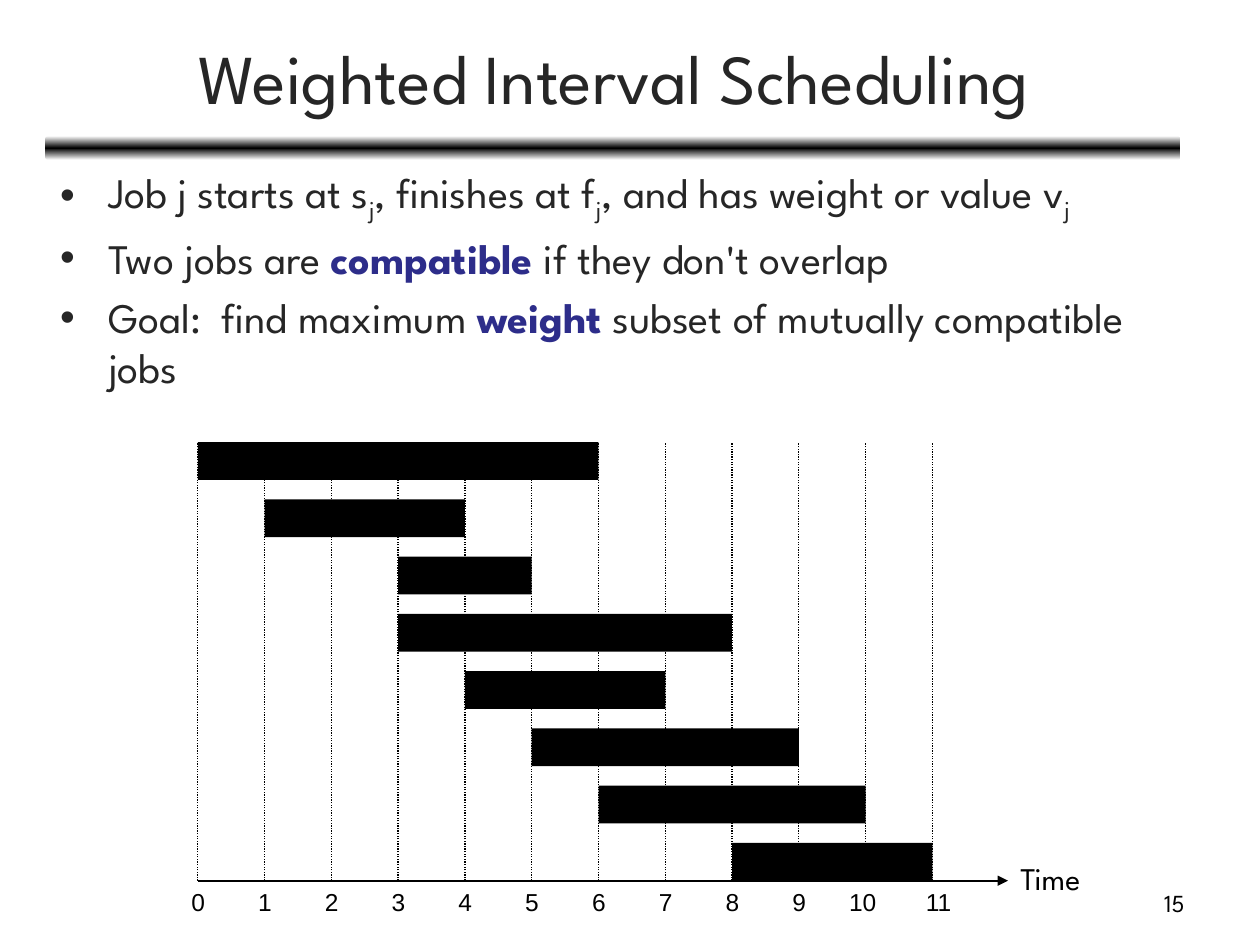
from lxml import etree
from pptx import Presentation
from pptx.dml.color import RGBColor
from pptx.enum.dml import MSO_LINE
from pptx.enum.shapes import MSO_CONNECTOR, MSO_SHAPE
from pptx.enum.text import MSO_ANCHOR, PP_ALIGN
from pptx.oxml.ns import qn
from pptx.util import Inches, Pt

RECT, ROUND_RECT = MSO_SHAPE.RECTANGLE, MSO_SHAPE.ROUNDED_RECTANGLE
STRAIGHT, DOTTED = MSO_CONNECTOR.STRAIGHT, MSO_LINE.ROUND_DOT
LEFT, CENTER, RIGHT = PP_ALIGN.LEFT, PP_ALIGN.CENTER, PP_ALIGN.RIGHT
TOP, MIDDLE = MSO_ANCHOR.TOP, MSO_ANCHOR.MIDDLE

COLORS = {"text": "262626", "accent": "2D2D8A", "black": "000000", "white": "FFFFFF"}
HEADING_FONT, LABEL_FONT = "League Spartan", "Arial"

# Time scale and rows of the schedule
AXIS_LEFT, AXIS_RIGHT, AXIS_Y = 1.57, 8, 6.99
UNIT = 0.53
CHART_TOP = 3.51
BAR_HEIGHT = 0.3
LAST_TIME = 11
JOBS = [(0, 6), (1, 4), (3, 5), (3, 8), (4, 7), (5, 9), (6, 10), (8, 11)]  # start, finish
ROW_STEP = (AXIS_Y - BAR_HEIGHT - CHART_TOP) / (len(JOBS) - 1)

# Each bullet is a list of (text, style)
BULLETS = [
    [("Job j starts at s", ""), ("j", "sub"), (", finishes at f", ""), ("j", "sub"),
     (", and has weight or value v", ""), ("j", "sub")],
    [("Two jobs are ", ""), ("compatible ", "key"), ("if they don't overlap", "")],
    [("Goal:  find maximum ", ""), ("weight", "key"),
     (" subset of mutually compatible jobs", "")],
]


def color(name):
    return RGBColor.from_string(COLORS[name])


def time_x(time):
    return AXIS_LEFT + UNIT * time


def style_span(span, size, font, color_name):
    span.font.size = Pt(size)
    span.font.name = font
    span.font.color.rgb = color(color_name)


def add_text(page, place, text, size, font, color_name, align=LEFT, anchor=TOP):
    box = page.shapes.add_textbox(*map(Inches, place))
    frame = box.text_frame
    frame.word_wrap = True
    frame.vertical_anchor = anchor
    frame.text = text
    para = frame.paragraphs[0]
    para.alignment = align
    style_span(para.runs[0], size, font, color_name)


def add_line(page, start, end, width):
    line = page.shapes.add_connector(STRAIGHT, *map(Inches, start + end))
    line.line.color.rgb = color("black")
    line.line.width = Pt(width)
    etree.SubElement(line._element.spPr, qn("a:effectLst"))
    return line


def add_rule(page):
    """Bar under the title, fading from black to white above and below."""
    rule = page.shapes.add_shape(ROUND_RECT, *map(Inches, (0.36, 1.08, 9.01, 0.19)))
    rule.shadow.inherit = False
    rule.line.fill.background()
    rule.fill.gradient()
    rule.fill.gradient_angle = 90
    stops = rule._element.spPr.find(qn("a:gradFill")).find(qn("a:gsLst"))
    for stop in list(stops):
        stops.remove(stop)
    for position, name in ((0, "white"), (50, "black"), (100, "white")):
        stop = etree.SubElement(stops, qn("a:gs"), pos=str(position * 1000))
        etree.SubElement(stop, qn("a:srgbClr"), val=COLORS[name])


def add_bullets(page):
    box = page.shapes.add_textbox(*map(Inches, (0.38, 1.27, 9, 5.55)))
    frame = box.text_frame
    frame.word_wrap = True
    for index, parts in enumerate(BULLETS):
        para = frame.add_paragraph() if index else frame.paragraphs[0]
        para.space_before = Pt(5)
        properties = para._p.get_or_add_pPr()
        properties.set("marL", str(Inches(0.38)))
        properties.set("indent", str(-Inches(0.38)))
        etree.SubElement(properties, qn("a:buFont"), typeface=LABEL_FONT)
        etree.SubElement(properties, qn("a:buChar"), char="•")
        for text, style in parts:
            span = para.add_run()
            span.text = text
            style_span(span, 24, HEADING_FONT, "accent" if style == "key" else "text")
            span.font.bold = style == "key"
            if style == "sub":
                span.font._element.set("baseline", "-25000")


def add_time_axis(page):
    axis = add_line(page, (AXIS_LEFT, AXIS_Y), (AXIS_RIGHT, AXIS_Y), 1.25)
    etree.SubElement(axis.line._get_or_add_ln(), qn("a:tailEnd"), type="triangle")
    add_text(page, (AXIS_RIGHT, 6.77, 0.83, 0.41), "Time", 18, HEADING_FONT, "black")
    for time in range(LAST_TIME + 1):
        x = time_x(time)
        grid_line = add_line(page, (x, AXIS_Y), (x, CHART_TOP), 0.75)
        grid_line.line.dash_style = DOTTED
        label_shift = 0.23 if time == 10 else 0.15
        add_text(page, (x - label_shift, AXIS_Y, 0.45, 0.37), str(time), 14,
                 LABEL_FONT, "black")


def add_job(page, row, start, finish):
    place = (time_x(start), CHART_TOP + ROW_STEP * row, UNIT * (finish - start), BAR_HEIGHT)
    bar = page.shapes.add_shape(RECT, *map(Inches, place))
    bar.shadow.inherit = False
    bar.fill.solid()
    bar.fill.fore_color.rgb = color("black")
    bar.line.fill.background()


def main():
    deck = Presentation()
    deck.slide_width, deck.slide_height = Inches(10), Inches(7.5)
    page = deck.slides.add_slide(deck.slide_layouts[6])

    # Heading and bullets
    add_rule(page)
    add_text(page, (0.37, 0.11, 9, 0.99), "Weighted Interval Scheduling", 40,
             HEADING_FONT, "text", CENTER, MIDDLE)
    add_bullets(page)

    # Schedule
    add_time_axis(page)
    for row, (start, finish) in enumerate(JOBS):
        add_job(page, row, start, finish)

    # Page number
    add_text(page, (7.17, 7, 2.33, 0.35), "15", 14, HEADING_FONT, "black", RIGHT)
    deck.save("out.pptx")


if __name__ == "__main__":
    main()
